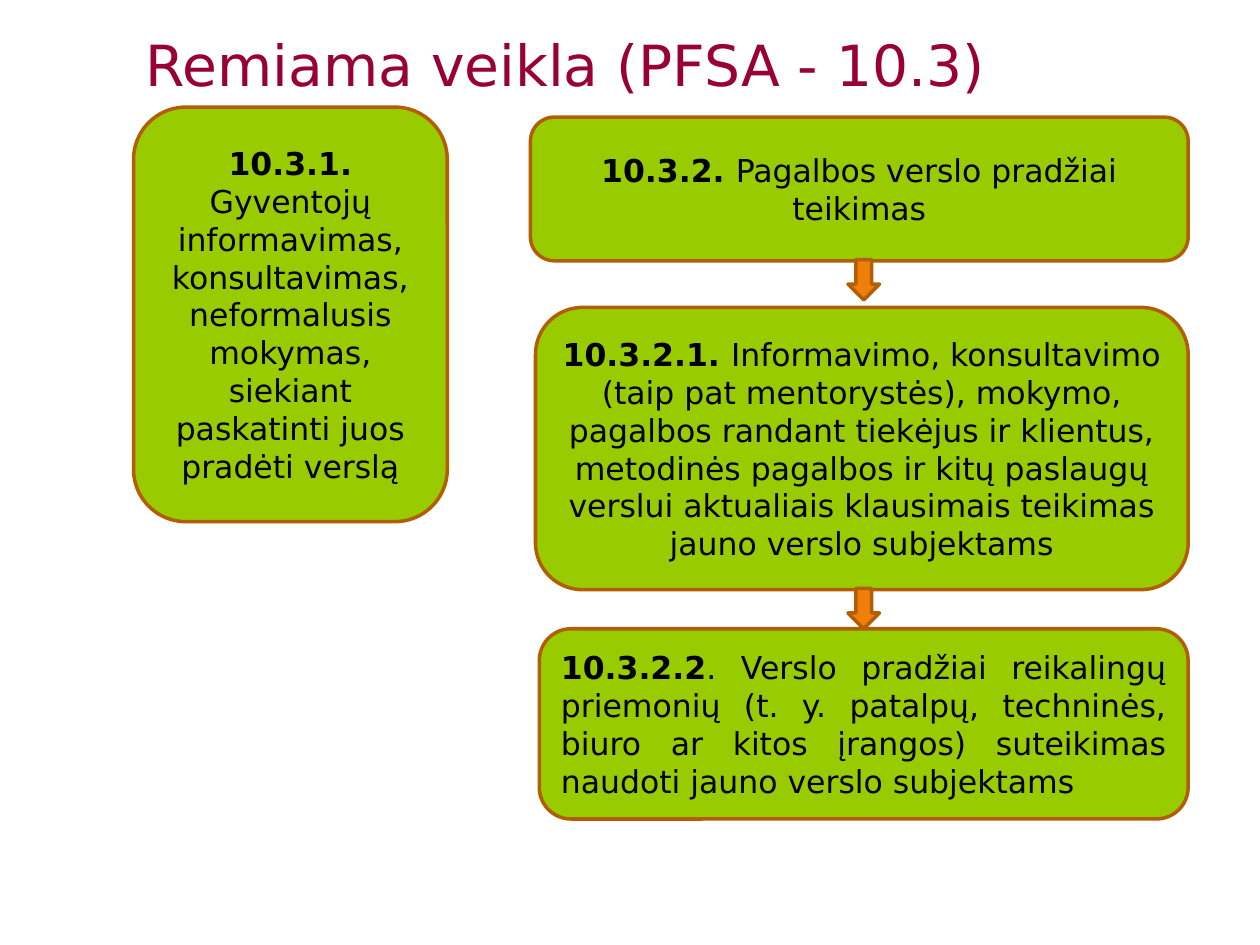
from dataclasses import dataclass

from pptx import Presentation
from pptx.dml.color import RGBColor as Color
from pptx.enum.shapes import MSO_SHAPE as Shape
from pptx.enum.text import MSO_ANCHOR as Anchor, PP_ALIGN as Align
from pptx.util import Inches, Pt


@dataclass(frozen=True)
class Theme:
    font: str = "DejaVu Sans"
    title_size: float = 32.4
    body_size: float = 18
    line_width: float = 2
    title: str = "990033"
    text: str = "000000"
    card: str = "99CC00"
    arrow: str = "F07F09"
    outline: str = "B25E07"


THEME = Theme()
TITLE = "Remiama veikla (PFSA - 10.3)"
LEFT_CARD = (
    "10.3.1. ",
    "Gyventojų informavimas, konsultavimas, neformalusis mokymas, "
    "siekiant paskatinti juos pradėti verslą",
)
STEPS = [
    (4.21, 0.93, 1.14, Align.CENTER, "10.3.2. ", "Pagalbos verslo pradžiai teikimas"),
    (4.25, 2.44, 2.24, Align.CENTER, "10.3.2.1. ",
     "Informavimo, konsultavimo (taip pat mentorystės), mokymo, pagalbos randant "
     "tiekėjus ir klientus, metodinės pagalbos ir kitų paslaugų verslui aktualiais "
     "klausimais teikimas jauno verslo subjektams"),
    (4.28, 4.99, 1.51, Align.JUSTIFY, "10.3.2.2",
     ". Verslo pradžiai reikalingų priemonių (t. y. patalpų, techninės, biuro ar "
     "kitos įrangos) suteikimas naudoti jauno verslo subjektams"),
]
STEP_RIGHT = 9.43
ARROW_LEFT, ARROW_WIDTH, ARROW_HEIGHT = 6.73, 0.25, 0.32


def add_span(para, text, *, size=THEME.body_size, color=THEME.text, bold=False):
    span = para.add_run()
    span.text = text
    span.font.name = THEME.font
    span.font.size = Pt(size)
    span.font.bold = bold
    span.font.color.rgb = Color.from_string(color)


def add_outlined(page, kind, place, fill):
    shape = page.shapes.add_shape(kind, *map(Inches, place))
    shape.shadow.inherit = False
    shape.fill.solid()
    shape.fill.fore_color.rgb = Color.from_string(fill)
    shape.line.color.rgb = Color.from_string(THEME.outline)
    shape.line.width = Pt(THEME.line_width)
    return shape


def add_card(page, place, code, text, align=Align.CENTER):
    frame = add_outlined(page, Shape.ROUNDED_RECTANGLE, place, THEME.card).text_frame
    frame.word_wrap = True
    frame.vertical_anchor = Anchor.MIDDLE
    para = frame.paragraphs[0]
    para.alignment = align
    add_span(para, code, bold=True)
    add_span(para, text)


def add_title(page):
    frame = page.shapes.add_textbox(*map(Inches, (1.06, 0.16, 7.87, 0.61))).text_frame
    frame.word_wrap = True
    frame.margin_top = Inches(0.08)
    add_span(frame.paragraphs[0], TITLE, size=THEME.title_size, color=THEME.title)


def main():
    """Build the slide of supported activities and save it."""
    deck = Presentation()
    deck.slide_width, deck.slide_height = Inches(10), Inches(7.5)
    page = deck.slides.add_slide(deck.slide_layouts[6])
    add_title(page)
    add_card(page, (1.06, 0.85, 2.49, 3.29), *LEFT_CARD)
    for left, top, height, align, code, text in STEPS:
        add_card(page, (left, top, STEP_RIGHT - left, height), code, text, align)
    for _, top, height, *_ in STEPS[:-1]:
        place = (ARROW_LEFT, top + height - 0.01, ARROW_WIDTH, ARROW_HEIGHT)
        add_outlined(page, Shape.DOWN_ARROW, place, THEME.arrow)
    deck.save("out.pptx")


if __name__ == "__main__":
    main()
